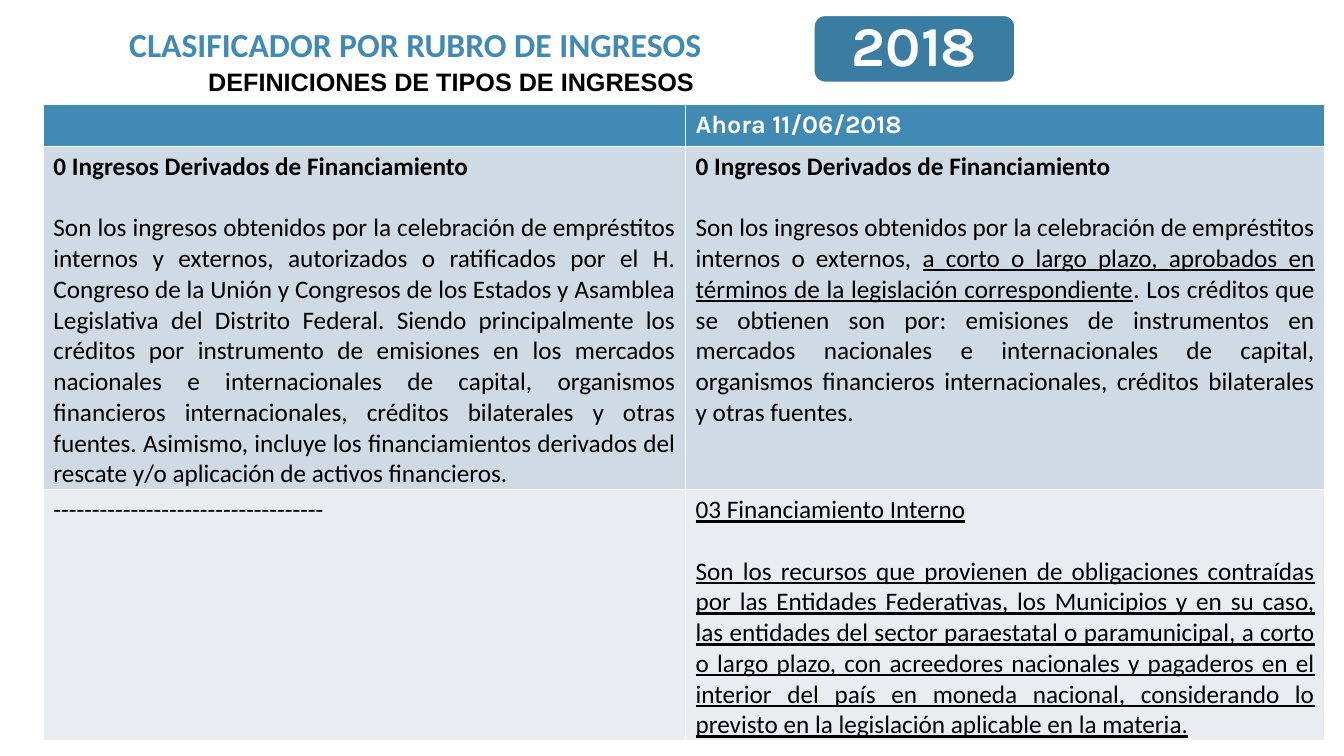
from dataclasses import dataclass

from pptx import Presentation
from pptx.dml.color import RGBColor
from pptx.enum.shapes import MSO_SHAPE
from pptx.enum.text import MSO_ANCHOR, MSO_AUTO_SIZE, PP_ALIGN
from pptx.util import Inches, Pt

COLORS = {
    "blue": "418AB3",
    "badge": "3B7DA2",
    "white": "FFFFFF",
    "black": "000000",
    "band": "CFDAE5",
    "light": "E9EDF2",
}


@dataclass
class Run:
    text: str
    bold: bool = False
    underline: bool = False


@dataclass
class Cell:
    fill: str
    heading: Run | None = None
    body: tuple[Run, ...] = ()
    font: str = "Calibri"
    color: str = "black"


@dataclass
class Label:
    text: str
    box: tuple[float, float, float, float]
    size: int
    font: str
    color: str


def rgb(name: str) -> RGBColor:
    return RGBColor.from_string(COLORS[name])


def add_run(p, run: Run, size: int, font: str, color: str) -> None:
    r = p.add_run()
    r.text = run.text
    style = {"size": Pt(size), "name": font, "bold": run.bold, "underline": run.underline}
    for key, value in style.items():
        setattr(r.font, key, value)
    r.font.color.rgb = rgb(color)


def place(s, box: tuple[float, float, float, float]) -> None:
    for key, value in zip(("left", "top", "width", "height"), box):
        setattr(s, key, Inches(value))


def write_label(s, label: Label) -> None:
    place(s, label.box)
    tf = s.text_frame
    frame = {"word_wrap": True, "auto_size": MSO_AUTO_SIZE.NONE, "vertical_anchor": MSO_ANCHOR.MIDDLE}
    for key, value in frame.items():
        setattr(tf, key, value)
    p = tf.paragraphs[0]
    for key, value in {"alignment": PP_ALIGN.CENTER, "line_spacing": 0.9, "space_before": Pt(0)}.items():
        setattr(p, key, value)
    add_run(p, Run(label.text, bold=True), label.size, label.font, label.color)


def write_cell(c, cell: Cell) -> None:
    c.fill.solid()
    c.fill.fore_color.rgb = rgb(cell.fill)
    c.margin_bottom = Inches(0)
    p = c.text_frame.paragraphs[0]
    if cell.heading:
        add_run(p, cell.heading, 18, cell.font, cell.color)
    if cell.body:
        p = c.text_frame.add_paragraph()
        p.alignment = PP_ALIGN.JUSTIFY
        p.space_before = Pt(22)
        for run in cell.body:
            add_run(p, run, 18, cell.font, cell.color)


TITLE = Label("CLASIFICADOR POR RUBRO DE INGRESOS", (0.17, 0.23, 7.9, 0.46), 24, "Calibri", "blue")
SUBTITLE = Label("DEFINICIONES DE TIPOS DE INGRESOS", (1.32, 0.64, 6.31, 0.37), 18, "Arial", "black")
YEAR = Label("2018", (8.07, 0.15, 2, 0.67), 40, "Karla", "white")

DEBT_HEADING = Run("0 Ingresos Derivados de Financiamiento", bold=True)
COLUMN_WIDTHS = (6.37, 6.34)
ROW_HEIGHTS = (0.41, 3.4, 2.49)
CELLS = (
    (
        Cell("blue"),
        Cell("blue", Run("Ahora 11/06/2018", bold=True), font="Karla", color="white"),
    ),
    (
        Cell("band", DEBT_HEADING, (
            Run("Son los ingresos obtenidos por la celebración de empréstitos internos y externos, "
                "autorizados o ratificados por el H. Congreso de la Unión y Congresos de los Estados "
                "y Asamblea Legislativa del Distrito Federal. Siendo principalmente los créditos por "
                "instrumento de emisiones en los mercados nacionales e internacionales de capital, "
                "organismos financieros internacionales, créditos bilaterales y otras fuentes. "
                "Asimismo, incluye los financiamientos derivados del rescate y/o aplicación de "
                "activos financieros."),
        )),
        Cell("band", DEBT_HEADING, (
            Run("Son los ingresos obtenidos por la celebración de empréstitos internos o externos, "),
            Run("a corto o largo plazo, aprobados en términos de la legislación correspondiente",
                underline=True),
            Run(". Los créditos que se obtienen son por: emisiones de instrumentos en mercados "
                "nacionales e internacionales de capital, organismos financieros internacionales, "
                "créditos bilaterales y otras fuentes."),
        )),
    ),
    (
        Cell("light", Run("-----------------------------------")),
        Cell("light", Run("03 Financiamiento Interno", underline=True), (
            Run("Son los recursos que provienen de obligaciones contraídas por las Entidades "
                "Federativas, los Municipios y en su caso, las entidades del sector paraestatal o "
                "paramunicipal, a corto o largo plazo, con acreedores nacionales y pagaderos en el "
                "interior del país en moneda nacional, considerando lo previsto en la legislación "
                "aplicable en la materia.", underline=True),
        )),
    ),
)


def main() -> None:
    prs = Presentation()
    prs.slide_width, prs.slide_height = Inches(13.33), Inches(7.5)
    slide = prs.slides.add_slide(prs.slide_layouts[5])
    shapes = slide.shapes

    write_label(shapes.title, TITLE)

    badge = shapes.add_shape(MSO_SHAPE.ROUNDED_RECTANGLE, *map(Inches, YEAR.box))
    badge.shadow.inherit = False
    badge.fill.solid()
    badge.fill.fore_color.rgb = rgb("badge")
    badge.line.color.rgb = rgb("white")
    badge.line.width = Pt(1.5)
    write_label(badge, YEAR)

    table = shapes.add_table(
        len(ROW_HEIGHTS), len(COLUMN_WIDTHS), Inches(0.43), Inches(1.04),
        Inches(sum(COLUMN_WIDTHS)), Inches(sum(ROW_HEIGHTS)),
    ).table
    for column, width in zip(table.columns, COLUMN_WIDTHS):
        column.width = Inches(width)
    for row, height, cells in zip(table.rows, ROW_HEIGHTS, CELLS):
        row.height = Inches(height)
        for c, cell in zip(row.cells, cells):
            write_cell(c, cell)

    write_label(shapes.add_textbox(*map(Inches, SUBTITLE.box)), SUBTITLE)
    prs.save("out.pptx")


if __name__ == "__main__":
    main()
